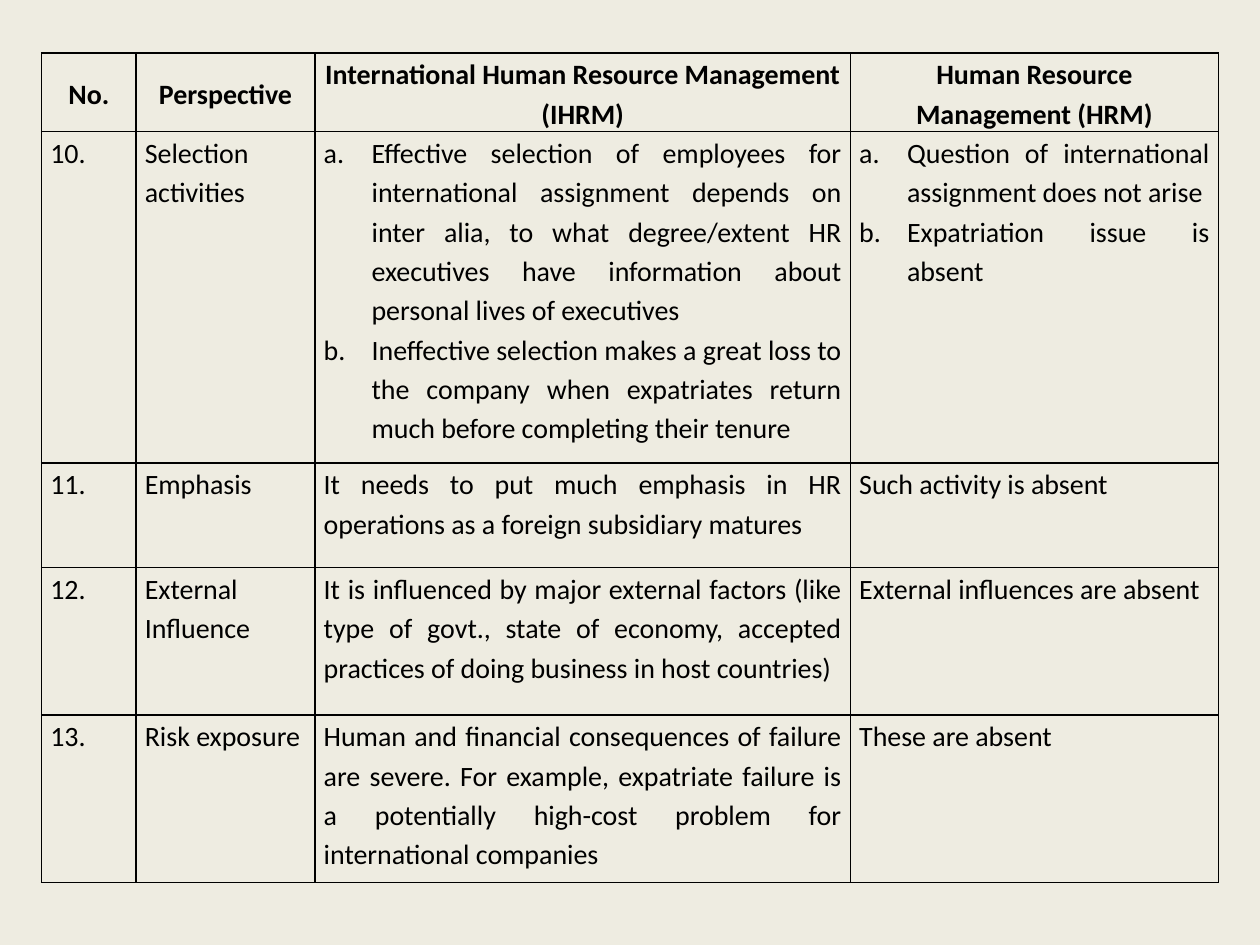
"""Build a slide with a table comparing IHRM and HRM."""
from dataclasses import dataclass

from lxml import etree
from pptx import Presentation
from pptx.dml.color import RGBColor
from pptx.enum.text import MSO_ANCHOR, PP_ALIGN
from pptx.oxml.ns import qn
from pptx.util import Inches, Pt

LEFT, CENTER, JUSTIFY = PP_ALIGN.LEFT, PP_ALIGN.CENTER, PP_ALIGN.JUSTIFY
TOP, MIDDLE = MSO_ANCHOR.TOP, MSO_ANCHOR.MIDDLE
COLORS = {"background": "EEECE1", "text": "000000", "border": "000000"}
FONT_NAME = "Calibri"
COLUMN_WIDTHS = (0.75, 1.42, 4.25, 2.92)
ROW_HEIGHTS = (0.62, 2.63, 0.83, 1.17, 1.33)
COLUMN_ALIGNMENTS = (LEFT, LEFT, JUSTIFY, JUSTIFY)
HEADINGS = (
    "No.",
    "Perspective",
    "International Human Resource Management (IHRM)",
    "Human Resource Management (HRM)",
)


@dataclass(frozen=True)
class Comparison:
    """One numbered perspective; several points make a lettered list."""

    number: str
    perspective: str
    international: tuple[str, ...]
    domestic: tuple[str, ...]


COMPARISONS = (
    Comparison(
        "10.",
        "Selection activities",
        (
            "Effective selection of employees for international assignment depends on "
            "inter alia, to what degree/extent HR executives have information about "
            "personal lives of executives",
            "Ineffective selection makes a great loss to the company when expatriates "
            "return much before completing their tenure",
        ),
        (
            "Question of international assignment does not arise",
            "Expatriation issue is absent",
        ),
    ),
    Comparison(
        "11.",
        "Emphasis",
        ("It needs to put much emphasis in HR operations as a foreign subsidiary matures",),
        ("Such activity is absent",),
    ),
    Comparison(
        "12.",
        "External Influence",
        (
            "It is influenced by major external factors (like type of govt., state of "
            "economy, accepted practices of doing business in host countries)",
        ),
        ("External influences are absent",),
    ),
    Comparison(
        "13.",
        "Risk exposure",
        (
            "Human and financial consequences of failure are severe. For example, "
            "expatriate failure is a potentially high-cost problem for international "
            "companies",
        ),
        ("These are absent",),
    ),
)


def add_borders(cell) -> None:
    """Draw a thin solid line on each side of a cell."""
    properties = cell._tc.get_or_add_tcPr()
    for index, side in enumerate(("lnL", "lnR", "lnT", "lnB")):
        line = etree.Element(qn(f"a:{side}"), w=str(Pt(1)))
        fill = etree.SubElement(line, qn("a:solidFill"))
        etree.SubElement(fill, qn("a:srgbClr"), val=COLORS["border"])
        properties.insert(index, line)


def add_letter(paragraph) -> None:
    """Give a paragraph a hanging indent and an automatic letter."""
    properties = paragraph._p.get_or_add_pPr()
    properties.set("marL", str(Inches(0.38)))
    properties.set("indent", str(Inches(-0.38)))
    etree.SubElement(properties, qn("a:buAutoNum"), type="alphaLcPeriod")


def fill_cell(cell, points: tuple[str, ...], alignment, heading: bool = False) -> None:
    """Write and format the paragraphs of a cell."""
    cell.margin_left = cell.margin_right = Inches(0.07)
    cell.margin_top = cell.margin_bottom = 0
    cell.vertical_anchor = MIDDLE if heading else TOP
    cell.fill.background()
    add_borders(cell)
    cell.text_frame.text = "\n".join(points)
    for paragraph in cell.text_frame.paragraphs:
        paragraph.alignment = alignment
        paragraph.line_spacing = 1.15
        if len(points) > 1:
            add_letter(paragraph)
        for run in paragraph.runs:
            run.font.name = FONT_NAME
            run.font.size = Pt(16)
            run.font.bold = heading
            run.font.color.rgb = RGBColor.from_string(COLORS["text"])


def add_comparison_table(slide) -> None:
    """Add the table with its heading row and comparison rows."""
    shape = slide.shapes.add_table(
        len(ROW_HEIGHTS), len(COLUMN_WIDTHS),
        Inches(0.33), Inches(0.42),
        Inches(sum(COLUMN_WIDTHS)), Inches(sum(ROW_HEIGHTS)),
    )
    table = shape.table
    table.horz_banding = False
    for column, width in zip(table.columns, COLUMN_WIDTHS):
        column.width = Inches(width)
    for row, height in zip(table.rows, ROW_HEIGHTS):
        row.height = Inches(height)
    for cell, heading in zip(table.rows[0].cells, HEADINGS):
        fill_cell(cell, (heading,), CENTER, heading=True)
    for row_index, item in enumerate(COMPARISONS, start=1):
        contents = ((item.number,), (item.perspective,), item.international, item.domestic)
        for column_index, points in enumerate(contents):
            cell = table.cell(row_index, column_index)
            fill_cell(cell, points, COLUMN_ALIGNMENTS[column_index])


def main() -> None:
    """Create and save the presentation."""
    presentation = Presentation()
    presentation.slide_width = Inches(10)
    presentation.slide_height = Inches(7.5)
    slide = presentation.slides.add_slide(presentation.slide_layouts.get_by_name("Blank"))
    slide.background.fill.solid()
    slide.background.fill.fore_color.rgb = RGBColor.from_string(COLORS["background"])
    add_comparison_table(slide)
    presentation.save("out.pptx")


if __name__ == "__main__":
    main()
